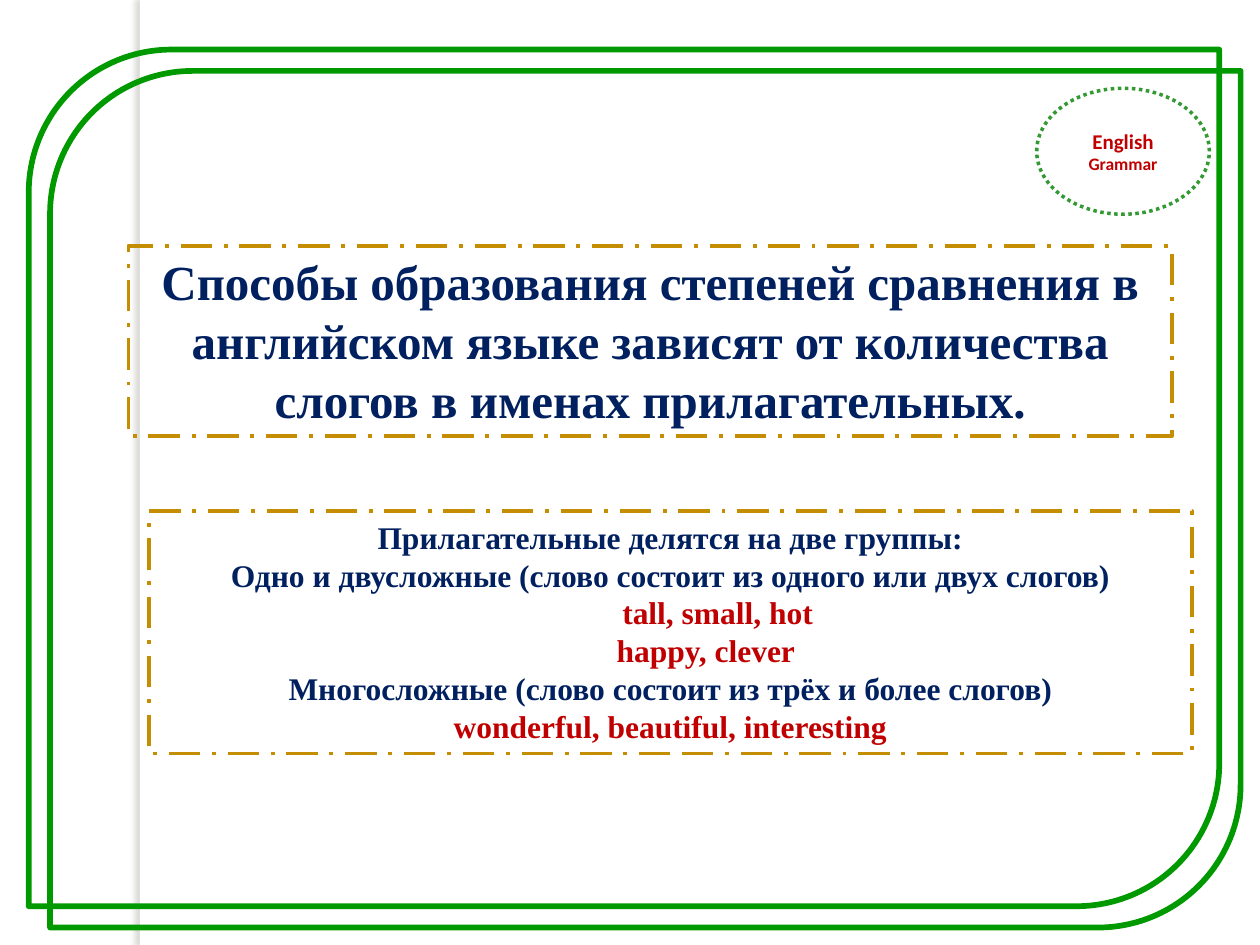
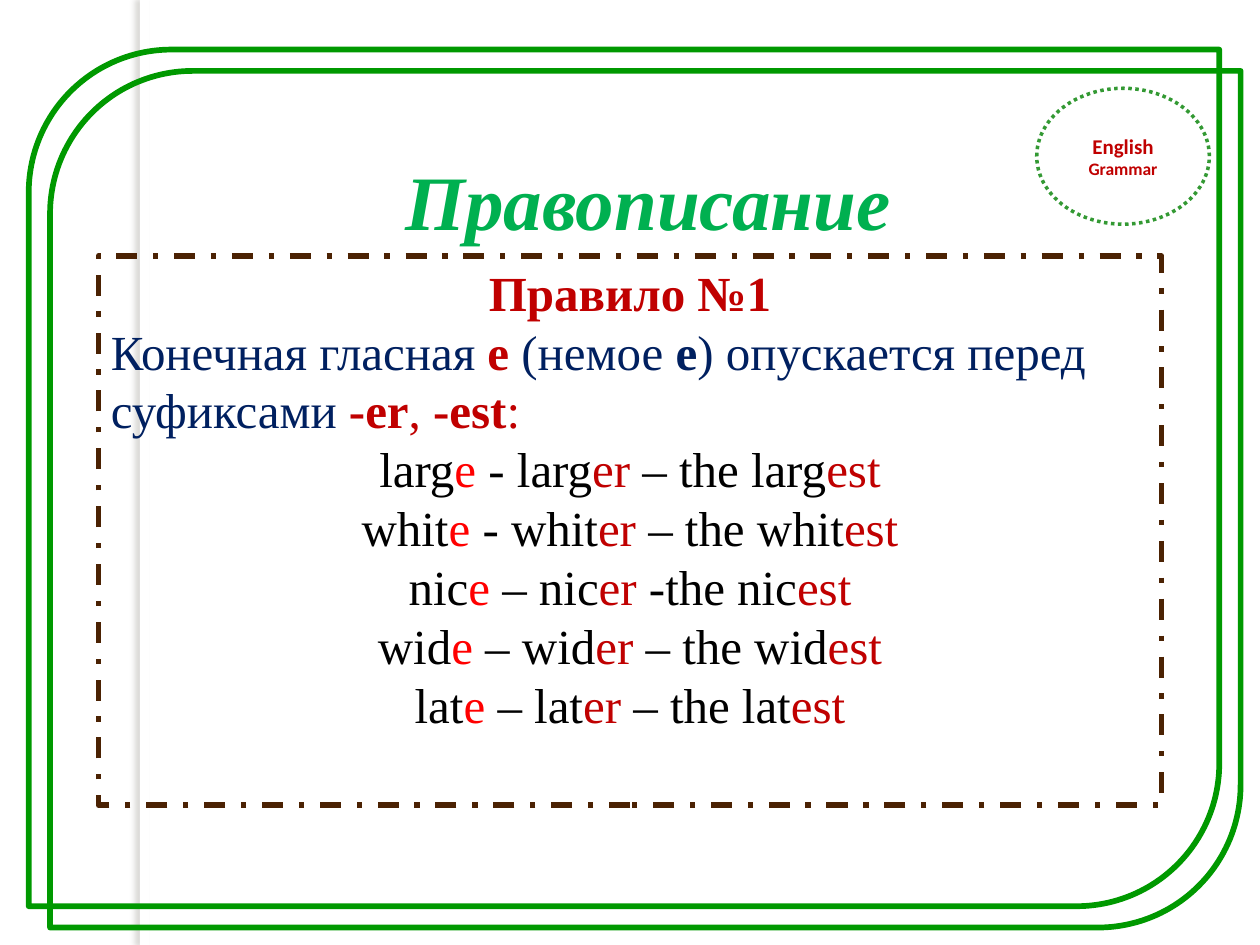
from dataclasses import dataclass
from lxml.etree import SubElement
from pptx import Presentation
from pptx.dml.color import RGBColor
from pptx.enum.dml import MSO_LINE
from pptx.enum.shapes import MSO_SHAPE
from pptx.enum.text import MSO_ANCHOR, MSO_AUTO_SIZE, PP_ALIGN
from pptx.oxml.ns import qn
from pptx.util import Cm, Pt


@dataclass(frozen=True)
class Theme:
    white: str = "FFFFFF"
    black: str = "000000"
    navy: str = "002060"
    red: str = "C00000"
    bright: str = "FF0000"
    green: str = "00B050"
    frame: str = "009900"
    badge: str = "339933"
    gold: str = "C58D01"
    brown: str = "4B2203"
    shade: str = "736F63"
    serif: str = "Times New Roman"
    sans: str = "Calibri"
    head: int = 44
    large: int = 28
    mid: int = 18
    small: int = 12
    tiny: int = 10


T = Theme()

# Content: a line is (runs, format); a run is (text, format)
BADGE = [([("English", {})], {}), ([("Grammar", {"size": T.tiny})], {})]

CLAIM = ("Способы образования степеней сравнения в английском языке "
         "зависят от количества слогов в именах прилагательных.")

GROUPS = [  # text, colour, first-line indent in points
    ("Прилагательные делятся на две группы:", T.navy, 0),
    ("Одно и двусложные (слово состоит из одного или двух слогов)", T.navy, 0),
    ("tall, small, hot", T.red, 54),
    ("happy, clever", T.red, 40.5),
    ("Многосложные (слово состоит из трёх и более слогов)", T.navy, 0),
    ("wonderful, beautiful, interesting", T.red, 0),
]

HEAD = "Правописание"
RULE = "Правило №1"
LAW = [  # text, colour, bold
    ("Конечная гласная ", T.navy, False), ("е ", T.red, True),
    ("(немое ", T.navy, False), ("е", T.navy, True),
    (") опускается перед суфиксами ", T.navy, False), ("-еr", T.red, True),
    (", ", T.red, False), ("-est", T.red, True), (":", T.red, False),
]
WORDS = [  # stem, two joining marks, first-line indent in points
    ("larg", " - ", " – ", -14),
    ("whit", " - ", " – ", 0),
    ("nic", " – ", " -", 0),
    ("wid", " – ", " – ", 0),
    ("lat", " – ", " – ", 0),
]

# Places in cm: left, top, width, height
BAND = (2.82, 0, 0.2, 19.05)
FRAME = (0.58, 1, 24, 17.27)
STEP = 0.43
SPOT = (20.9, 1.78, 3.48)
BOXES = {
    "claim": (2.59, 4.95, 21.03, 3.84),
    "groups": (3, 10.31, 21.03, 4.88),
    "head": (7.92, 2.97, 12.29, 2.13),
    "rule": (1.98, 5.16, 21.44, 11.07),
}


def color(code):
    return RGBColor.from_string(code)


def write(shape, lines, **base):
    """Fill a shape with lines of runs; line and run formats override base."""
    frame = shape.text_frame
    frame.word_wrap = True
    frame.auto_size = MSO_AUTO_SIZE.NONE
    frame.vertical_anchor = base.get("anchor", MSO_ANCHOR.TOP)
    for n, (runs, look) in enumerate(lines):
        para = frame.add_paragraph() if n else frame.paragraphs[0]
        fmt = {**base, **look}
        para.alignment = fmt.get("align", PP_ALIGN.CENTER)
        para.space_before = Pt(0)
        props = para._p.get_or_add_pPr()
        props.set("marL", "0")
        props.set("indent", str(Pt(fmt.get("indent", 0))))
        SubElement(props, qn("a:buNone"))
        for text, own in runs:
            style = {**fmt, **own}
            run = para.add_run()
            run.text = text
            font = run.font
            font.name = style.get("font", T.serif)
            font.size = Pt(style["size"])
            font.bold = style.get("bold", False)
            font.italic = style.get("italic", False)
            font.color.rgb = color(style.get("ink", T.navy))


def edge(shape, ink, width, dash=None):
    shape.line.color.rgb = color(ink)
    shape.line.width = Pt(width)
    if dash:
        shape.line.dash_style = dash


def add(slide, kind, place, fill=None):
    shape = slide.shapes.add_shape(kind, *map(Cm, place))
    shape.shadow.inherit = False
    if fill:
        shape.fill.solid()
        shape.fill.fore_color.rgb = color(fill)
    else:
        shape.fill.background()
    shape.line.fill.background()
    return shape


def shade(shape):
    """Cast a soft shadow to the left."""
    effects = shape._element.spPr.find(qn("a:effectLst"))
    cast = SubElement(effects, qn("a:outerShdw"), blurRad=str(Pt(3)),
                      dist=str(Pt(3)), dir="10800000",
                      algn="tl", rotWithShape="0")
    ink = SubElement(cast, qn("a:srgbClr"), val=T.shade)
    SubElement(ink, qn("a:alpha"), val="25000")


def place(slide, holder, name):
    """Move a placeholder to its box, in front of the shared parts."""
    holder.left, holder.top, holder.width, holder.height = map(Cm, BOXES[name])
    slide.shapes._spTree.append(holder._element)
    return holder


def start(deck, tall):
    """Make a slide with band, double frame and badge."""
    slide = deck.slides.add_slide(deck.slide_layouts[1])
    shade(add(slide, MSO_SHAPE.RECTANGLE, BAND, T.white))
    left, top, *size = FRAME
    for n in range(2):
        spot = (left + n * STEP, top + n * STEP, *size)
        edge(add(slide, MSO_SHAPE.ROUND_2_DIAG_RECTANGLE, spot), T.frame, 3.25)
    badge = add(slide, MSO_SHAPE.OVAL, (*SPOT, tall), T.white)
    edge(badge, T.badge, 2, MSO_LINE.ROUND_DOT)
    write(badge, BADGE, font=T.sans, size=T.small, ink=T.red, bold=True,
          anchor=MSO_ANCHOR.MIDDLE)
    return slide


def groups(deck):
    slide = start(deck, 2.54)
    title = place(slide, slide.shapes.title, "claim")
    body = place(slide, slide.placeholders[1], "groups")
    for box in (title, body):
        edge(box, T.gold, 2.25, MSO_LINE.LONG_DASH_DOT)
    write(title, [([(CLAIM, {})], {})], size=T.large, bold=True)
    lines = [([(text, {"ink": ink})], {"indent": dent})
             for text, ink, dent in GROUPS]
    write(body, lines, size=T.mid, bold=True)


def rule(deck):
    slide = start(deck, 2.74)
    body = place(slide, slide.placeholders[1], "rule")
    edge(body, T.brown, 3, MSO_LINE.DASH_DOT)
    law = [(text, {"ink": ink, "bold": bold}) for text, ink, bold in LAW]
    lines = [([(RULE, {"ink": T.red, "bold": True})], {}),
             (law, {"align": PP_ALIGN.LEFT})]
    for stem, one, two, dent in WORDS:
        parts = [(stem, T.black), ("e", T.bright), (one + stem, T.black),
                 ("er", T.red), (f"{two}the {stem}", T.black), ("est", T.red)]
        lines.append(([(text, {"ink": ink}) for text, ink in parts],
                      {"indent": dent}))
    write(body, lines, size=T.large)
    title = place(slide, slide.shapes.title, "head")
    write(title, [([(HEAD, {})], {})], size=T.head, ink=T.green, bold=True,
          italic=True, align=PP_ALIGN.LEFT)


def main():
    deck = Presentation()
    deck.slide_width, deck.slide_height = Cm(25.4), Cm(19.05)
    groups(deck)
    rule(deck)
    deck.save("out.pptx")


if __name__ == "__main__":
    main()
